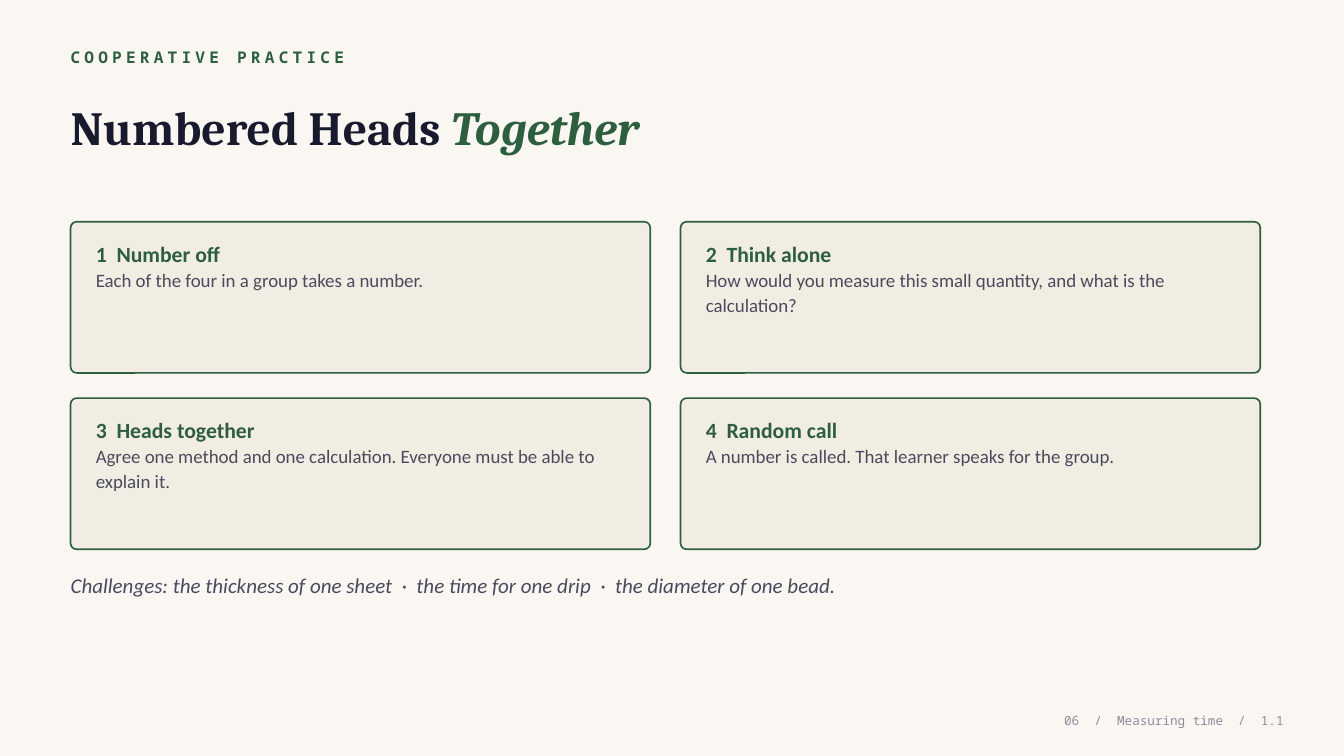
import pptx
import pptx.dml.color
import pptx.enum.shapes
import pptx.enum.text
import pptx.util

EMU_PER_PX = 9144
COLORS = {
    "paper": "FAF7F2",
    "card": "F2EDE3",
    "green": "2D5F3F",
    "ink": "1A1A2E",
    "body": "4A4A5E",
    "muted": "8B8B9C",
}
STEPS = [
    ("1  Number off", "Each of the four in a group takes a number."),
    ("2  Think alone", "How would you measure this small quantity, and what is the calculation?"),
    ("3  Heads together", "Agree one method and one calculation. Everyone must be able to explain it."),
    ("4  Random call", "A number is called. That learner speaks for the group."),
]
ANCHOR = pptx.enum.text.MSO_ANCHOR


def px(length):
    return pptx.util.Emu(length * EMU_PER_PX)


def color(name):
    return pptx.dml.color.RGBColor.from_string(COLORS[name])


def style_run(run, font_name, size, color_name, bold=False, italic=False):
    run.font.name = font_name
    run.font.size = pptx.util.Pt(size)
    run.font.color.rgb = color(color_name)
    run.font.bold = bold
    run.font.italic = italic


def add_text_frame(slide, box, anchor=ANCHOR.MIDDLE):
    text_frame = slide.shapes.add_textbox(*map(px, box)).text_frame
    text_frame.word_wrap = True
    text_frame.vertical_anchor = anchor
    text_frame.margin_left = text_frame.margin_right = 0
    text_frame.margin_top = text_frame.margin_bottom = 0
    return text_frame


def add_line(slide, box, text, *style, **emphasis):
    text_frame = add_text_frame(slide, box)
    text_frame.text = text
    paragraph = text_frame.paragraphs[0]
    style_run(paragraph.runs[0], *style, **emphasis)
    return paragraph


def add_header(slide, box):
    left, top, width, height = box
    eyebrow = add_line(slide, (left, top, width, 30), "COOPERATIVE PRACTICE",
                       "Noto Sans Mono", 11.5, "green", bold=True)
    eyebrow.runs[0].font._element.set("spc", "300")
    title = add_line(slide, (left, top + 36, width, height - 36), "Numbered Heads ",
                     "Cambria", 34, "ink", bold=True)
    accent = title.add_run()
    accent.text = "Together"
    style_run(accent, "Cambria", 34, "green", bold=True, italic=True)


def add_card(slide, box, heading, description):
    left, top, width, height = box
    card = slide.shapes.add_shape(
        pptx.enum.shapes.MSO_SHAPE.ROUNDED_RECTANGLE, *map(px, box))
    card.adjustments[0] = 0.04
    card.shadow.inherit = False
    card.fill.solid()
    card.fill.fore_color.rgb = color("card")
    card.line.color.rgb = color("green")
    card.line.width = pptx.util.Pt(1.2)

    text_frame = add_text_frame(
        slide, (left + 25, top + 16, width - 50, height - 30), ANCHOR.TOP)
    text_frame.text = f"{heading}\n{description}"
    for paragraph in text_frame.paragraphs:
        paragraph.line_spacing = 1.1
    heading_paragraph, description_paragraph = text_frame.paragraphs
    style_run(heading_paragraph.runs[0], "Calibri", 15.5, "green", bold=True)
    style_run(description_paragraph.runs[0], "Calibri", 13.5, "body")


def add_step_grid(slide, box):
    left, top, width, height = box
    column_gap, row_gap = 30, 25
    card_width = (width - column_gap) // 2
    card_height = (height - row_gap) // 2
    for index, (heading, description) in enumerate(STEPS):
        row, column = divmod(index, 2)
        card_box = (left + column * (card_width + column_gap),
                    top + row * (card_height + row_gap),
                    card_width, card_height)
        add_card(slide, card_box, heading, description)


def add_challenges(slide, box):
    add_line(slide, box,
             "Challenges: the thickness of one sheet  ·  the time for one drip  ·  "
             "the diameter of one bead.",
             "Calibri", 15, "body", italic=True)


def add_footer(slide, box):
    footer = add_line(slide, box, "06  /  Measuring time  /  1.1",
                      "Noto Sans Mono", 9, "muted")
    footer.alignment = pptx.enum.text.PP_ALIGN.RIGHT


def main():
    presentation = pptx.Presentation()
    presentation.slide_width = px(1333)
    presentation.slide_height = px(750)
    slide = presentation.slides.add_slide(presentation.slide_layouts[6])
    slide.background.fill.solid()
    slide.background.fill.fore_color.rgb = color("paper")
    add_header(slide, (70, 42, 1193, 131))
    add_step_grid(slide, (70, 220, 1180, 325))
    add_challenges(slide, (70, 555, 1193, 50))
    add_footer(slide, (933, 700, 340, 30))
    presentation.save("out.pptx")


if __name__ == "__main__":
    main()
